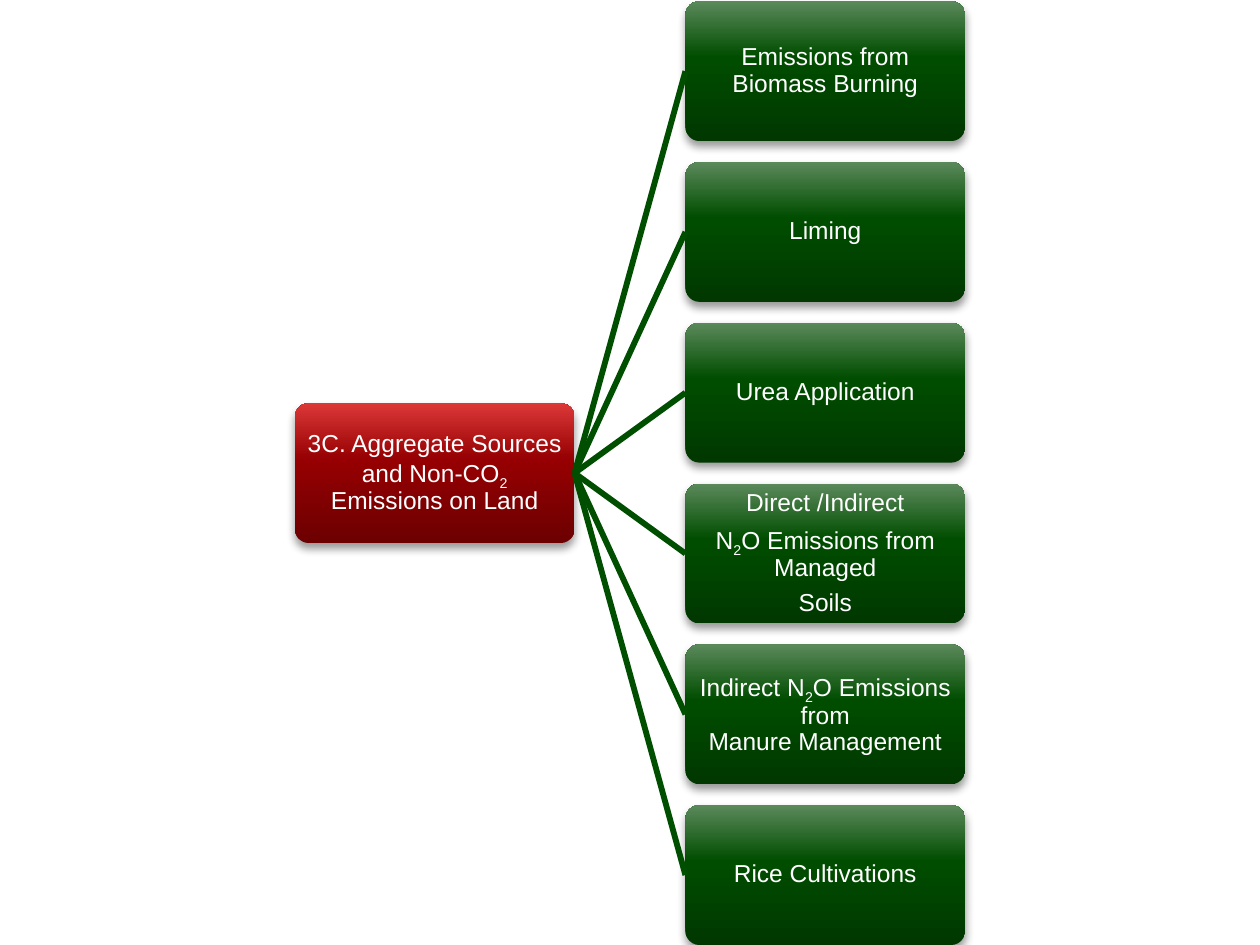
from lxml import etree
from pptx import Presentation
from pptx.dml.color import RGBColor
from pptx.enum.shapes import MSO_CONNECTOR, MSO_SHAPE
from pptx.enum.text import MSO_ANCHOR, PP_ALIGN
from pptx.oxml.ns import qn
from pptx.util import Inches, Pt

ROUNDED = MSO_SHAPE.ROUNDED_RECTANGLE
STRAIGHT = MSO_CONNECTOR.STRAIGHT
MIDDLE = MSO_ANCHOR.MIDDLE
CENTER = PP_ALIGN.CENTER
LEFT_SIDE, RIGHT_SIDE = 1, 3

BOX_WIDTH, BOX_HEIGHT = 2.22, 1.11
ROW_STEP = 1.276
RED = [(0, "6C0001"), (60, "960002"), (100, "DC3838")]
GREEN = [(0, "003800"), (60, "004D00"), (100, "5B895B")]
LINK_GREEN = "004F00"

# Text between underscores is set as subscript.
CATEGORY = ["3C. Aggregate Sources and Non-CO_2_ Emissions on Land"]
SOURCES = [
    ["Emissions from Biomass Burning"],
    ["Liming"],
    ["Urea Application"],
    ["Direct /Indirect", "N_2_O Emissions from Managed", "Soils"],
    ["Indirect N_2_O Emissions from\vManure Management"],
    ["Rice Cultivations"],
]


def rgb(color):
    return RGBColor.from_string(color)


def add_color(parent, color):
    return etree.SubElement(parent, qn("a:srgbClr"), val=color)


def fill_gradient(shape, stops):
    """Fill from bottom to top with (percent, colour) stops."""
    gradient = etree.Element(qn("a:gradFill"), rotWithShape="1")
    stop_list = etree.SubElement(gradient, qn("a:gsLst"))
    for percent, color in stops:
        stop = etree.SubElement(stop_list, qn("a:gs"), pos=str(percent * 1000))
        add_color(stop, color)
    etree.SubElement(gradient, qn("a:lin"), ang="16200000", scaled="0")
    shape.line.fill.background()
    shape._element.spPr.find(qn("a:ln")).addprevious(gradient)


def add_shadow(shape):
    shape.shadow.inherit = False
    effects = shape._element.spPr.find(qn("a:effectLst"))
    shadow = etree.SubElement(
        effects, qn("a:outerShdw"), blurRad=str(Pt(5.2)), dist=str(Pt(3)),
        dir="5400000", rotWithShape="0")
    etree.SubElement(add_color(shadow, "000000"), qn("a:alpha"), val="40000")


def write_label(frame, lines):
    frame.word_wrap = True
    frame.vertical_anchor = MIDDLE
    frame.margin_left = frame.margin_right = Inches(0.04)
    frame.margin_top = frame.margin_bottom = Inches(0.04)
    frame.text = "\n".join(line.replace("_", "") for line in lines)
    for paragraph, line in zip(frame.paragraphs, lines):
        paragraph.alignment = CENTER
        paragraph.line_spacing = 0.9
        paragraph.space_after = Pt(5)
        if "_" in line:
            paragraph.clear()
            for index, part in enumerate(line.split("_")):
                before_break, *after_break = part.split("\v")
                run = paragraph.add_run()
                run.text = before_break
                if index % 2:
                    run.font._element.set("baseline", "-25000")
                for text in after_break:
                    paragraph.add_line_break()
                    paragraph.add_run().text = text
        for run in paragraph.runs:
            run.font.name = "Arial"
            run.font.size = Pt(14)
            run.font.color.rgb = rgb("FFFFFF")


def add_box(slide, left, top, stops, lines):
    box = slide.shapes.add_shape(
        ROUNDED, Inches(left), Inches(top), Inches(BOX_WIDTH), Inches(BOX_HEIGHT))
    box.adjustments[0] = 0.1
    fill_gradient(box, stops)
    add_shadow(box)
    write_label(box.text_frame, lines)
    return box


def add_link(slide, category, source):
    link = slide.shapes.add_connector(STRAIGHT, 0, 0, 0, 0)
    link.begin_connect(category, RIGHT_SIDE)
    link.end_connect(source, LEFT_SIDE)
    link.line.color.rgb = rgb(LINK_GREEN)
    link.line.width = Pt(3.35)
    etree.SubElement(link._element.spPr, qn("a:effectLst"))


def add_tree(slide, left, top, gap):
    """Place the category box, centred beside its column of sources."""
    middle_row = (len(SOURCES) - 1) / 2
    category = add_box(slide, left, top + middle_row * ROW_STEP, RED, CATEGORY)
    for row, lines in enumerate(SOURCES):
        source = add_box(
            slide, left + BOX_WIDTH + gap, top + row * ROW_STEP, GREEN, lines)
        add_link(slide, category, source)


def main():
    presentation = Presentation()
    presentation.slide_width = Inches(10)
    presentation.slide_height = Inches(7.5)
    slide = presentation.slides.add_slide(presentation.slide_layouts[6])
    add_tree(slide, left=2.34, top=0.01, gap=0.88)
    presentation.save("out.pptx")


if __name__ == "__main__":
    main()
